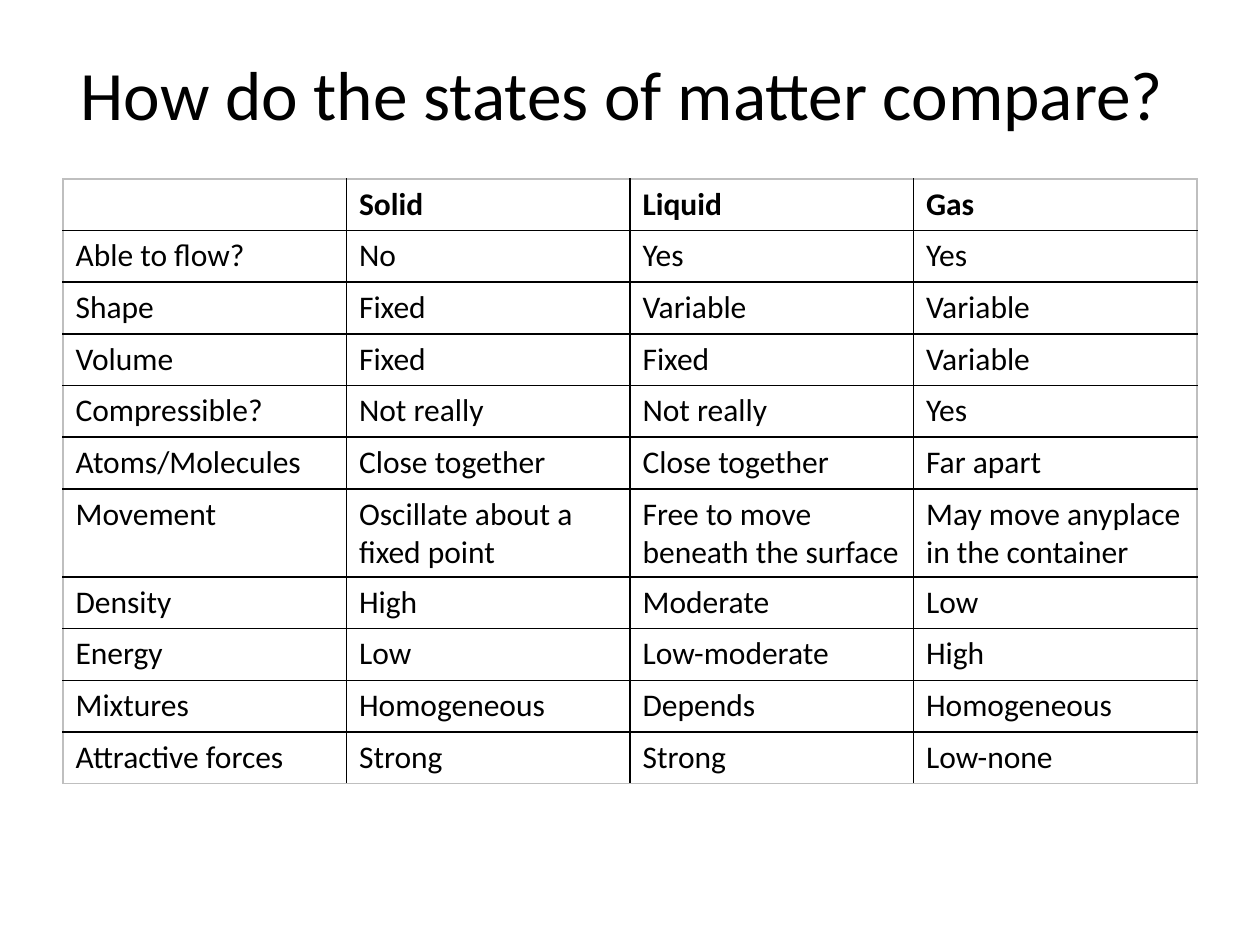
"""Build a slide with a table that compares solids, liquids and gases."""
from lxml.etree import SubElement
from pptx import Presentation
from pptx.dml.color import RGBColor
from pptx.enum.text import MSO_ANCHOR, PP_ALIGN
from pptx.oxml.ns import qn
from pptx.util import Inches, Pt

BLACK = RGBColor(0x00, 0x00, 0x00)
GRAY = RGBColor(0xBF, 0xBF, 0xBF)
FONT = "Calibri"
ROWS = [
    ("", "Solid", "Liquid", "Gas"),
    ("Able to flow?", "No", "Yes", "Yes"),
    ("Shape", "Fixed", "Variable", "Variable"),
    ("Volume", "Fixed", "Fixed", "Variable"),
    ("Compressible?", "Not really", "Not really", "Yes"),
    ("Atoms/Molecules", "Close together", "Close together", "Far apart"),
    ("Movement", "Oscillate about a fixed point", "Free to move beneath the surface",
     "May move anyplace in the container"),
    ("Density", "High", "Moderate", "Low"),
    ("Energy", "Low", "Low-moderate", "High"),
    ("Mixtures", "Homogeneous", "Depends", "Homogeneous"),
    ("Attractive forces", "Strong", "Strong", "Low-none"),
]


def style_font(font, size, bold=False):
    font.name = FONT
    font.size = Pt(size)
    font.bold = bold
    font.color.rgb = BLACK


def add_border(cell, side, color):
    properties = cell._tc.get_or_add_tcPr()
    line = SubElement(properties, qn(f"a:{side}"), w=str(Pt(1)))
    fill = SubElement(line, qn("a:solidFill"))
    SubElement(fill, qn("a:srgbClr"), val=str(color))


presentation = Presentation()
presentation.slide_width = Inches(10)
presentation.slide_height = Inches(7.5)
slide = presentation.slides.add_slide(presentation.slide_layouts[6])

title = slide.shapes.add_textbox(Inches(0.5), Inches(0.3), Inches(9), Inches(0.87))
title.text_frame.word_wrap = True
title.text_frame.vertical_anchor = MSO_ANCHOR.MIDDLE
title.text_frame.text = "How do the states of matter compare? "
paragraph = title.text_frame.paragraphs[0]
paragraph.alignment = PP_ALIGN.CENTER
style_font(paragraph.runs[0].font, 39.6)

last_row = len(ROWS) - 1
last_column = len(ROWS[0]) - 1
table = slide.shapes.add_table(
    len(ROWS), len(ROWS[0]), Inches(0.5), Inches(1.42), Inches(9), Inches(4.51)
).table
table.horz_banding = False
for row_index, values in enumerate(ROWS):
    table.rows[row_index].height = Inches(0.41)
    for column_index, value in enumerate(values):
        cell = table.cell(row_index, column_index)
        cell.text = value
        style_font(cell.text_frame.paragraphs[0].font, 18, row_index == 0)
        for run in cell.text_frame.paragraphs[0].runs:
            style_font(run.font, 18, row_index == 0)
        outer_sides = {
            "lnL": column_index == 0,
            "lnR": column_index == last_column,
            "lnT": row_index == 0,
            "lnB": row_index == last_row,
        }
        for side, is_outer in outer_sides.items():
            add_border(cell, side, GRAY if is_outer else BLACK)
        cell.fill.background()

presentation.save("out.pptx")
